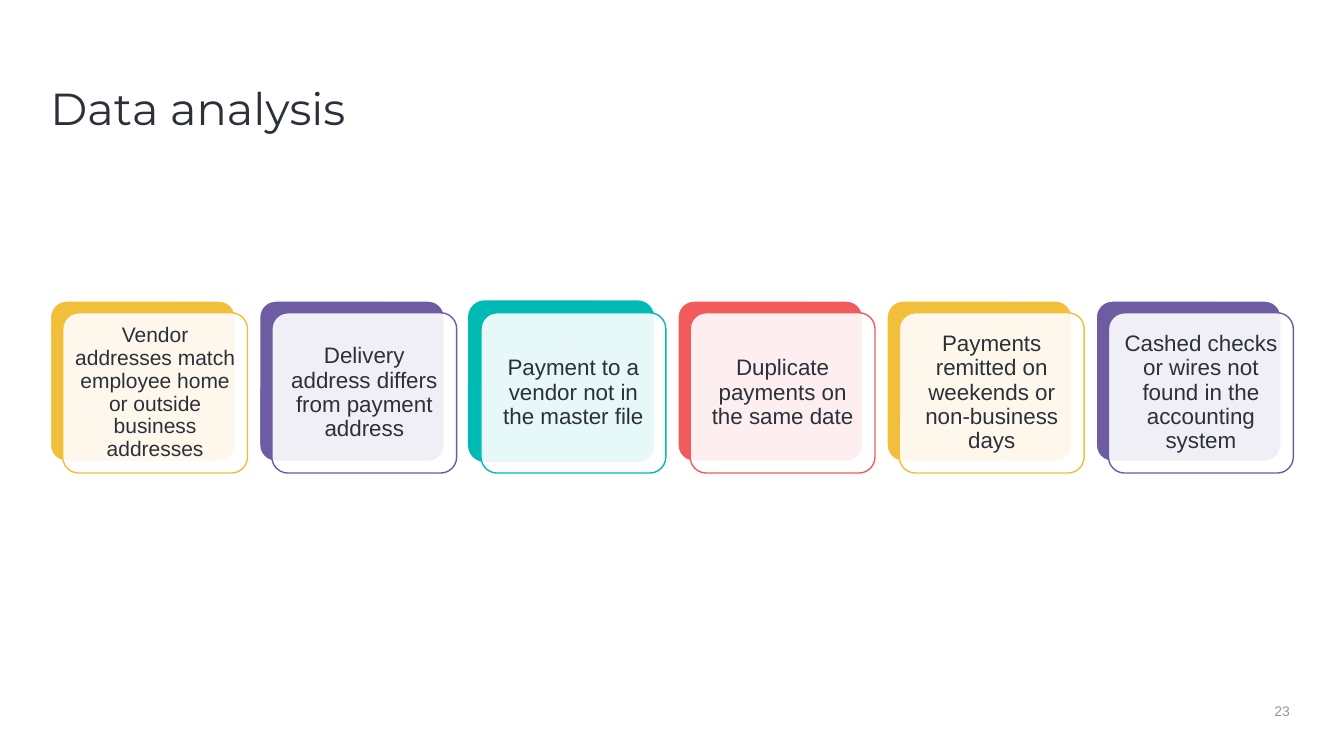
from lxml.etree import SubElement
from pptx import Presentation
from pptx.dml.color import RGBColor
from pptx.enum.shapes import MSO_SHAPE
from pptx.enum.text import MSO_ANCHOR, PP_ALIGN
from pptx.oxml.ns import qn
from pptx.util import Pt

INK = "2B303A"
WHITE = "FFFFFF"
GRAY = "979797"
YELLOW = "F2BF3B"
PURPLE = "6E5CA3"
TEAL = "00BAB3"
RED = "F15B5C"

CARD_LEFT, CARD_TOP = 36, 215
CARD_WIDTH, CARD_HEIGHT = 132, 114.5
CARD_PITCH = 149.4
FRONT_SHIFT_X, FRONT_SHIFT_Y = 8.8, 8.4

CHECKS = [
    ("Vendor addresses match employee home or outside business addresses", YELLOW, WHITE, 15),
    ("Delivery address differs from payment address", PURPLE, WHITE, 16),
    ("Payment to a vendor not in the master file", TEAL, TEAL, 16),
    ("Duplicate payments on the same date", RED, WHITE, 16),
    ("Payments remitted on weekends or non-business days", YELLOW, WHITE, 16),
    ("Cashed checks or wires not found in the accounting system", PURPLE, WHITE, 16),
]


def color(value):
    return RGBColor.from_string(value)


def write_text(shape, text, size, font_name, font_color, alignment, anchor, margins, spacing=1.0):
    frame = shape.text_frame
    frame.word_wrap = True
    frame.vertical_anchor = anchor
    frame.margin_left, frame.margin_top, frame.margin_right, frame.margin_bottom = map(Pt, margins)
    paragraph = frame.paragraphs[0]
    paragraph.alignment = alignment
    paragraph.line_spacing = spacing
    paragraph.space_before = Pt(0)
    run = paragraph.add_run()
    run.text = text
    run.font.size = Pt(size)
    run.font.name = font_name
    run.font.color.rgb = color(font_color)


def add_title(slide, text):
    title = slide.shapes.title
    title.left, title.top, title.width, title.height = Pt(36), Pt(54.7), Pt(888), Pt(42.5)
    write_text(title, text, 32, "Montserrat", INK, PP_ALIGN.LEFT, MSO_ANCHOR.TOP, (0, 7.2, 0, 0), 0.9)


def add_panel(slide, left, top, fill_color, line_color):
    shape = slide.shapes.add_shape(
        MSO_SHAPE.ROUNDED_RECTANGLE, Pt(left), Pt(top), Pt(CARD_WIDTH), Pt(CARD_HEIGHT))
    shape.adjustments[0] = 0.1
    shape.shadow.inherit = False
    shape.fill.solid()
    shape.fill.fore_color.rgb = color(fill_color)
    shape.line.color.rgb = color(line_color)
    shape.line.width = Pt(1)
    return shape


def set_opacity(shape, percent):
    fill = shape.fill._xPr.find(qn("a:solidFill"))
    SubElement(fill[0], qn("a:alpha"), val=str(percent * 1000))


def add_card(slide, left, text, accent, back_line, size):
    add_panel(slide, left, CARD_TOP, accent, back_line)
    front = add_panel(slide, left + FRONT_SHIFT_X, CARD_TOP + FRONT_SHIFT_Y, WHITE, accent)
    set_opacity(front, 90)
    margin = size * 0.3
    write_text(front, text, size, "Arial", INK, PP_ALIGN.CENTER, MSO_ANCHOR.MIDDLE, (margin,) * 4, 0.9)


def add_page_number(slide, number):
    box = slide.shapes.add_textbox(Pt(901.4), Pt(501.8), Pt(28.8), Pt(12.2))
    write_text(box, number, 10, "Arial", GRAY, PP_ALIGN.CENTER, MSO_ANCHOR.MIDDLE, (0,) * 4)


def main():
    presentation = Presentation()
    presentation.slide_width, presentation.slide_height = Pt(960), Pt(540)
    slide = presentation.slides.add_slide(presentation.slide_layouts.get_by_name("Title Only"))
    add_title(slide, "Data analysis")
    for index, check in enumerate(CHECKS):
        add_card(slide, CARD_LEFT + index * CARD_PITCH, *check)
    add_page_number(slide, "23")
    presentation.save("out.pptx")


if __name__ == "__main__":
    main()
